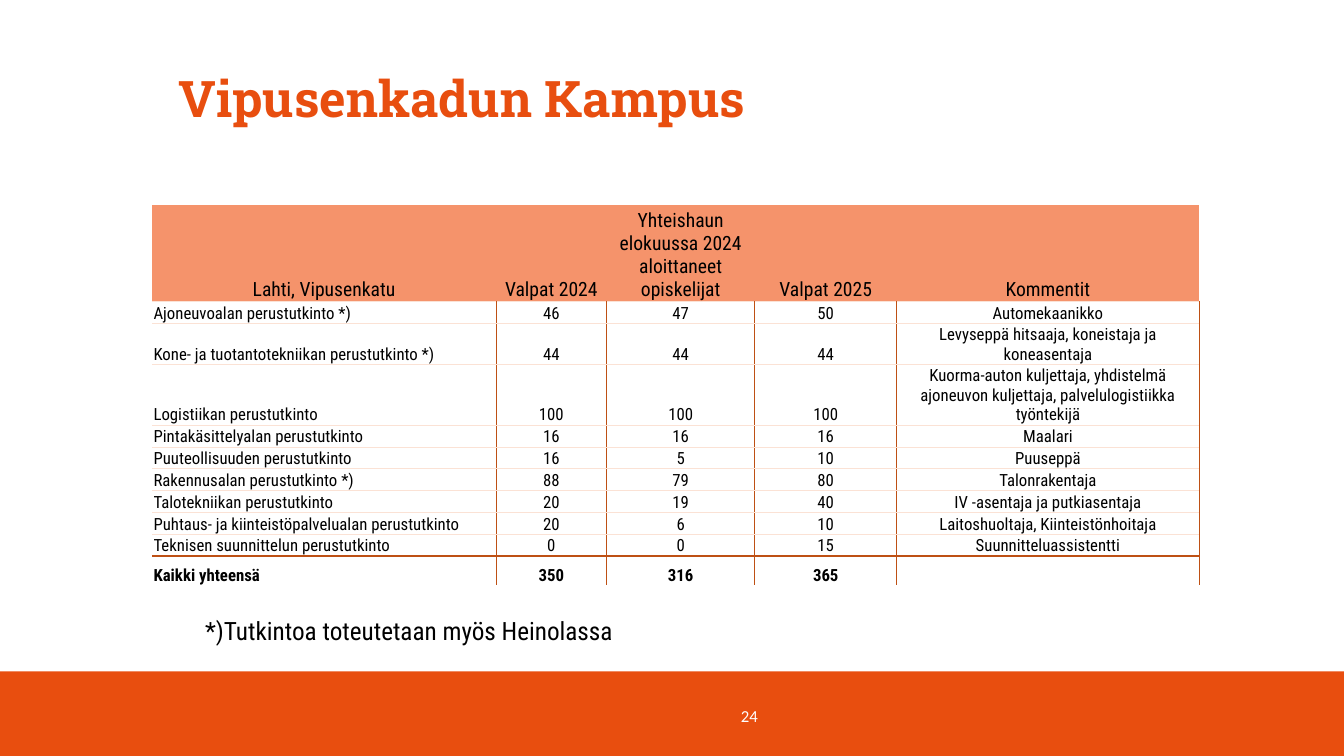
import dataclasses
import typing

import lxml.etree
import pptx
import pptx.dml.color
import pptx.enum.shapes
import pptx.enum.text
import pptx.oxml.ns
import pptx.util

Cm = pptx.util.Cm
ALIGN = pptx.enum.text.PP_ALIGN
ANCHOR = pptx.enum.text.MSO_ANCHOR

COLORS = {
    "orange": "E84E0F",
    "header": "F5936B",
    "column_line": "BE5014",
    "row_line": "FBE2D5",
    "black": "000000",
    "white": "FFFFFF",
}
BODY_FONT = "Roboto Condensed"

COLUMN_WIDTHS = [8.66, 2.79, 3.73, 3.58, 7.62]
HEADINGS = [
    "Lahti, Vipusenkatu",
    "Valpat 2024",
    "Yhteishaun elokuussa 2024 aloittaneet opiskelijat",
    "Valpat 2025",
    "Kommentit",
]
HEADER_HEIGHT = 2.44


@dataclasses.dataclass(frozen=True)
class Degree:
    name: str
    quota_2024: int
    started_2024: int
    quota_2025: int
    comment: str
    height: float = 0.55

    def texts(self) -> list[str]:
        return [self.name, str(self.quota_2024), str(self.started_2024),
                str(self.quota_2025), self.comment]


@dataclasses.dataclass(frozen=True)
class Style:
    size: float
    color: str = "black"
    font: str = BODY_FONT
    bold: bool = False
    align: ALIGN = ALIGN.CENTER


@dataclasses.dataclass(frozen=True)
class Label:
    text: str
    left: float
    top: float
    width: float
    height: float
    anchor: ANCHOR
    style: Style


class Border(typing.NamedTuple):
    color: str
    width: float


DEGREES = [
    Degree("Ajoneuvoalan perustutkinto *)", 46, 47, 50, "Automekaanikko"),
    Degree("Kone- ja tuotantotekniikan perustutkinto *)", 44, 44, 44,
           "Levyseppä hitsaaja, koneistaja ja koneasentaja", 1.03),
    Degree("Logistiikan perustutkinto", 100, 100, 100,
           "Kuorma-auton kuljettaja, yhdistelmä ajoneuvon kuljettaja, "
           "palvelulogistiikka työntekijä", 1.53),
    Degree("Pintakäsittelyalan perustutkinto", 16, 16, 16, "Maalari"),
    Degree("Puuteollisuuden perustutkinto", 16, 5, 10, "Puuseppä"),
    Degree("Rakennusalan perustutkinto *)", 88, 79, 80, "Talonrakentaja"),
    Degree("Talotekniikan perustutkinto", 20, 19, 40, "IV -asentaja ja putkiasentaja"),
    Degree("Puhtaus- ja kiinteistöpalvelualan perustutkinto", 20, 6, 10,
           "Laitoshuoltaja, Kiinteistönhoitaja"),
    Degree("Teknisen suunnittelun perustutkinto", 0, 0, 15, "Suunnitteluassistentti"),
]
TOTAL = Degree("Kaikki yhteensä", sum(d.quota_2024 for d in DEGREES),
               sum(d.started_2024 for d in DEGREES),
               sum(d.quota_2025 for d in DEGREES), "")

LABELS = [
    Label("24", 11.73, 17.53, 7.62, 1.02, ANCHOR.MIDDLE,
          Style(12, "white", "Calibri", align=ALIGN.RIGHT)),
    Label("*)Tutkintoa toteutetaan myös Heinolassa", 4.24, 15.39, 12.14, 1.02,
          ANCHOR.TOP, Style(18)),
]

COLUMN_LINE = Border("column_line", 0.5)
ROW_LINE = Border("row_line", 0.5)
TOTAL_LINE = Border("column_line", 2)


def rgb(name: str) -> pptx.dml.color.RGBColor:
    return pptx.dml.color.RGBColor.from_string(COLORS[name])


def write(tf: pptx.text.text.TextFrame, text: str, style: Style) -> None:
    p = tf.paragraphs[0]
    p.alignment = style.align
    r = p.add_run()
    r.text = text
    r.font.size = pptx.util.Pt(style.size)
    r.font.name = style.font
    r.font.bold = style.bold
    r.font.color.rgb = rgb(style.color)


def set_border(cell: pptx.table._Cell, side: str, border: Border | None) -> None:
    """Draw one cell edge (L, R, T or B), or clear it when border is None."""
    qn = pptx.oxml.ns.qn
    ln = lxml.etree.SubElement(cell._tc.get_or_add_tcPr(), qn(f"a:ln{side}"))
    if border is None:
        lxml.etree.SubElement(ln, qn("a:noFill"))
        return
    ln.set("w", str(pptx.util.Pt(border.width)))
    fill = lxml.etree.SubElement(ln, qn("a:solidFill"))
    lxml.etree.SubElement(fill, qn("a:srgbClr"), val=COLORS[border.color])


def add_title(s: pptx.slide.Slide, text: str) -> None:
    sp = s.shapes.title
    sp.left, sp.top, sp.width, sp.height = Cm(4.24), Cm(1.91), Cm(25.4), Cm(1.45)
    tf = sp.text_frame
    tf.auto_size = pptx.enum.text.MSO_AUTO_SIZE.NONE
    tf.vertical_anchor = ANCHOR.BOTTOM
    tf.paragraphs[0].line_spacing = 0.9
    write(tf, text, Style(36, "orange", "Roboto Slab", True, ALIGN.LEFT))


def add_footer_band(s: pptx.slide.Slide) -> None:
    sp = s.shapes.add_shape(pptx.enum.shapes.MSO_SHAPE.RECTANGLE,
                            0, Cm(16.92), Cm(33.87), Cm(2.13))
    sp.shadow.inherit = False
    sp.fill.solid()
    sp.fill.fore_color.rgb = rgb("orange")
    sp.line.fill.background()


def add_label(s: pptx.slide.Slide, label: Label) -> None:
    sp = s.shapes.add_textbox(Cm(label.left), Cm(label.top),
                              Cm(label.width), Cm(label.height))
    tf = sp.text_frame
    tf.word_wrap = True
    tf.vertical_anchor = label.anchor
    write(tf, label.text, label.style)


def add_degree_table(s: pptx.slide.Slide) -> None:
    rows = [HEADINGS] + [d.texts() for d in DEGREES + [TOTAL]]
    heights = [HEADER_HEIGHT] + [d.height for d in DEGREES + [TOTAL]]
    last = len(rows) - 1
    table = s.shapes.add_table(len(rows), len(HEADINGS), Cm(3.84), Cm(5.16),
                               Cm(sum(COLUMN_WIDTHS)), Cm(sum(heights))).table
    table.first_row = table.horz_banding = False
    for column, width in zip(table.columns, COLUMN_WIDTHS):
        column.width = Cm(width)
    # Line i lies above row i.
    row_lines = [None] + [ROW_LINE] * (last - 1) + [TOTAL_LINE, None]
    for i, texts in enumerate(rows):
        table.rows[i].height = Cm(heights[i])
        is_header = i == 0
        for j, text in enumerate(texts):
            cell = table.cell(i, j)
            cell.margin_left = cell.margin_right = cell.margin_top = Cm(0.03)
            cell.margin_bottom = 0
            cell.vertical_anchor = ANCHOR.BOTTOM
            set_border(cell, "L", None if is_header or j == 0 else COLUMN_LINE)
            set_border(cell, "R", None if is_header else COLUMN_LINE)
            set_border(cell, "T", row_lines[i])
            set_border(cell, "B", row_lines[i + 1])
            if is_header:
                cell.fill.solid()
                cell.fill.fore_color.rgb = rgb("header")
            else:
                cell.fill.background()
            align = ALIGN.LEFT if j == 0 and not is_header else ALIGN.CENTER
            write(cell.text_frame, text,
                  Style(14 if is_header else 12, bold=i == last, align=align))


def main() -> None:
    prs = pptx.Presentation()
    prs.slide_width, prs.slide_height = Cm(33.87), Cm(19.05)
    s = prs.slides.add_slide(prs.slide_layouts[5])
    add_footer_band(s)
    add_title(s, "Vipusenkadun Kampus")
    add_degree_table(s)
    for label in LABELS:
        add_label(s, label)
    prs.save("out.pptx")


if __name__ == "__main__":
    main()
